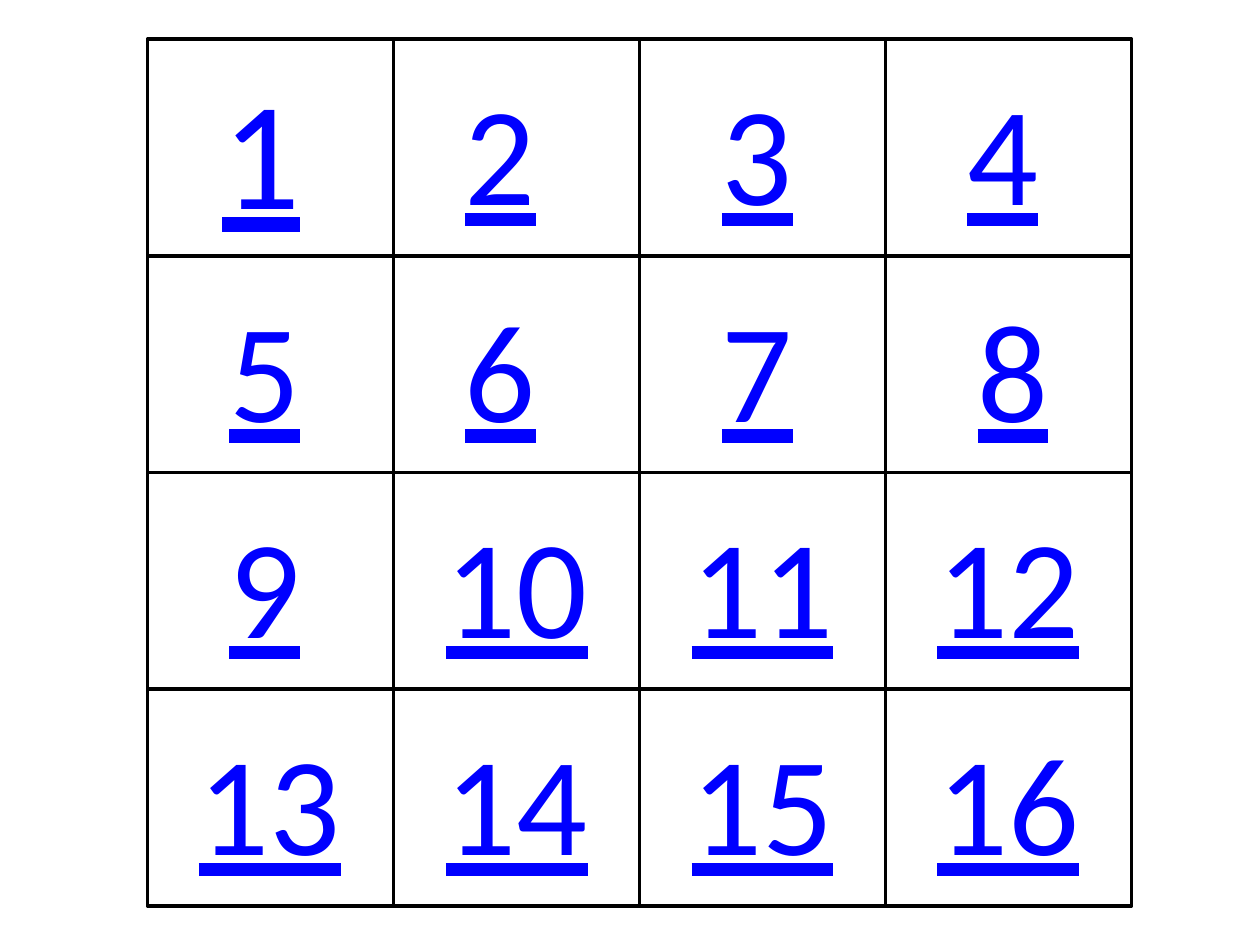
import pptx
import pptx.util
import pptx.dml.color
import pptx.enum.shapes
import pptx.enum.text

Inches = pptx.util.Inches
Pt = pptx.util.Pt

COLS = ROWS = 4
LABELS = [
    (1.41, 1.33), (3.59, 1.25), (5.63, 1.09), (7.58, 1.25),
    (1.72, 1.09), (3.59, 1.02), (5.63, 1.02), (7.66, 1.02),
    (1.72, 1.09), (3.44, 1.41), (5.39, 1.41), (7.34, 1.41),
    (1.48, 1.33), (3.44, 1.48), (5.39, 1.33), (7.34, 1.33),
]


def color(code):
    return pptx.dml.color.RGBColor.from_string(code)


def add_cell(slide, left, top, width, height):
    cell = slide.shapes.add_shape(
        pptx.enum.shapes.MSO_SHAPE.RECTANGLE, left, top, width, height)
    cell.shadow.inherit = False
    cell.fill.background()
    cell.line.color.rgb = color("000000")
    cell.line.width = Pt(2)


def add_label(slide, text, left, top, width, height, size, align):
    box = slide.shapes.add_textbox(left, top, width, height)
    frame = box.text_frame
    frame.word_wrap = True
    frame.auto_size = pptx.enum.text.MSO_AUTO_SIZE.SHAPE_TO_FIT_TEXT
    para = frame.paragraphs[0]
    para.alignment = align
    run = para.add_run()
    run.text = text
    run.font.name = "Calibri"
    run.font.size = Pt(size)
    run.font.underline = True
    run.font.color.rgb = color("0000FF")


def add_board(slide, left, top, width, height):
    wide, high = width / COLS, height / ROWS
    for index in range(COLS * ROWS):
        row, col = divmod(index, COLS)
        add_cell(slide, int(left + col * wide), int(top + row * high),
                 int(wide), int(high))
    align = pptx.enum.text.PP_ALIGN
    for index, (start, span) in enumerate(LABELS):
        first = index == 0
        gap, tall, size = (0.08, 1.58, 88) if first else (0.16, 1.45, 80)
        add_label(slide, str(index + 1), Inches(start),
                  int(top + index // COLS * high + Inches(gap)),
                  Inches(span), Inches(tall), size,
                  align.CENTER if first else align.LEFT)


def main():
    deck = pptx.Presentation()
    deck.slide_width = Inches(10)
    deck.slide_height = Inches(7.5)
    slide = deck.slides.add_slide(deck.slide_layouts[6])
    add_board(slide, Inches(1.17), Inches(0.31), Inches(7.81), Inches(6.88))
    deck.save("out.pptx")


if __name__ == "__main__":
    main()
